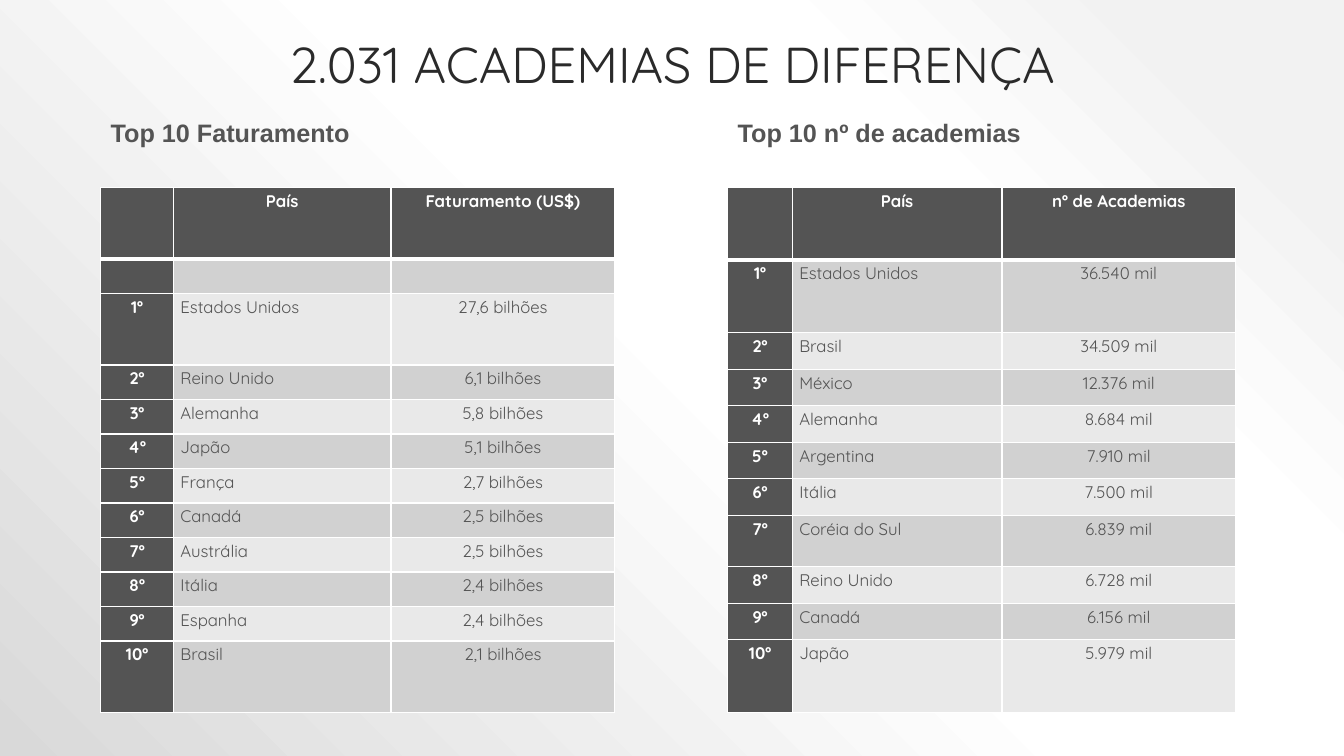
import dataclasses

import lxml.etree
import pptx
import pptx.dml.color
import pptx.enum.text
import pptx.oxml.ns
import pptx.util

WIDE, HIGH = pptx.util.Inches(13.33), pptx.util.Inches(7.5)
COLS, ROWS = 40, 30  # slide grid
DARK, WHITE, INK = "545454", "FFFFFF", "2A2A2A"
BANDS = ("D1D1D1", "E9E9E9")
ALIGN = pptx.enum.text.PP_ALIGN
ANCHOR = pptx.enum.text.MSO_ANCHOR
TOP, DEPTH = 7.44, 20.84  # both tables, in grid rows


@dataclasses.dataclass
class Rank:
    title: str
    left: float
    span: float  # width of the heading
    head: str
    cols: tuple[float, ...]
    tall: dict[int, float]  # rows that differ from the even height
    items: list[tuple[str, str]]
    gap: bool = False  # empty row under the header


RANKS = [
    Rank("Top 10 Faturamento", 3, 14.34, "Faturamento (US$)",
         (2.16, 6.48, 6.66), {0: 2.84, 2: 2.84, 11: 2.84},
         [("Estados Unidos", "27,6 bilhões"), ("Reino Unido", "6,1 bilhões"),
          ("Alemanha", "5,8 bilhões"), ("Japão", "5,1 bilhões"),
          ("França", "2,7 bilhões"), ("Canadá", "2,5 bilhões"),
          ("Austrália", "2,5 bilhões"), ("Itália", "2,4 bilhões"),
          ("Espanha", "2,4 bilhões"), ("Brasil", "2,1 bilhões")], gap=True),
    Rank("Top 10 nº de academias", 21.66, 13.86, "nº de Academias",
         (1.92, 6.24, 6.96), {0: 2.88, 1: 2.88, 7: 2.04, 10: 2.88},
         [("Estados Unidos", "36.540 mil"), ("Brasil", "34.509 mil"),
          ("México", "12.376 mil"), ("Alemanha", "8.684 mil"),
          ("Argentina", "7.910 mil"), ("Itália", "7.500 mil"),
          ("Coréia do Sul", "6.839 mil"), ("Reino Unido", "6.728 mil"),
          ("Canadá", "6.156 mil"), ("Japão", "5.979 mil")]),
]


def across(cols: float) -> int:
    return round(WIDE * cols / COLS)


def down(rows: float) -> int:
    return round(HIGH * rows / ROWS)


def tint(code: str) -> pptx.dml.color.RGBColor:
    return pptx.dml.color.RGBColor.from_string(code)


def node(root, tag: str, **attrs):
    return lxml.etree.SubElement(
        root, pptx.oxml.ns.qn(tag), {k: str(v) for k, v in attrs.items()})


def write(frame, text: str, *, size: float, font: str, color: str,
          bold: bool = False, align=ALIGN.LEFT, space: float = 1.0) -> None:
    par = frame.paragraphs[0]
    par.alignment, par.line_spacing = align, space
    run = par.add_run()
    run.text = text
    run.font.size, run.font.name = pptx.util.Pt(size), font
    run.font.bold = bold
    run.font.color.rgb = tint(color)


def label(slide, text: str, left: float, top: float, width: float,
          height: float, anchor, **style) -> None:
    box = slide.shapes.add_textbox(
        across(left), down(top), across(width), down(height))
    box.text_frame.word_wrap = True
    box.text_frame.vertical_anchor = anchor
    write(box.text_frame, text, **style)


def shade(slide) -> None:
    """Radial background centred on the top right corner."""
    slide.background.fill.gradient()
    grad = slide.element.xpath(".//p:bg//a:gradFill")[0]
    for child in list(grad):
        grad.remove(child)
    stops = node(grad, "a:gsLst")
    for pos, code in ((10, "F2F2F2"), (28, WHITE), (48, WHITE), (100, "D9D9D9")):
        node(node(stops, "a:gs", pos=pos * 1000), "a:srgbClr", val=code)
    node(node(grad, "a:path", path="circle"), "a:fillToRect",
         l=100000, b=100000)


def edge(cell, top: int, base: int) -> None:
    props = cell._tc.get_or_add_tcPr()
    for side, width in (("L", 1), ("R", 1), ("T", top), ("B", base)):
        line = node(props, f"a:ln{side}", w=pptx.util.Pt(width))
        node(node(line, "a:solidFill"), "a:srgbClr", val=WHITE)


def chart(slide, rank: Rank) -> None:
    """Draw one ranking table."""
    rows = [("", "País", rank.head)]
    if rank.gap:
        rows.append(("", "", ""))
    rows += [(f"{n}º", *item) for n, item in enumerate(rank.items, 1)]
    grid = slide.shapes.add_table(
        len(rows), len(rank.cols), across(rank.left), down(TOP),
        across(sum(rank.cols)), down(DEPTH)).table
    for col, width in zip(grid.columns, rank.cols):
        col.width = across(width)
    even = (DEPTH - sum(rank.tall.values())) / (len(rows) - len(rank.tall))
    for r, texts in enumerate(rows):
        grid.rows[r].height = down(rank.tall.get(r, even))
        for c, text in enumerate(texts):
            cell = grid.cell(r, c)
            key = r == 0 or c == 0
            edge(cell, 3 if r == 1 else 1, 3 if r == 0 else 1)
            cell.fill.solid()
            cell.fill.fore_color.rgb = tint(DARK if key else BANDS[(r - 1) % 2])
            cell.margin_left = cell.margin_right = pptx.util.Inches(0.07)
            cell.margin_top = cell.margin_bottom = 0
            if text:
                write(cell.text_frame, text, size=12, font="Quicksand",
                      color=WHITE if key else DARK, bold=key, space=1.15,
                      align=ALIGN.LEFT if r and c == 1 else ALIGN.CENTER)


def main() -> None:
    deck = pptx.Presentation()
    deck.slide_width, deck.slide_height = WIDE, HIGH
    slide = deck.slides.add_slide(deck.slide_layouts[6])
    shade(slide)
    # Title
    label(slide, "2.031 ACADEMIAS DE DIFERENÇA", 4, 1.2, 32, 2.76,
          ANCHOR.BOTTOM, size=36, font="Quicksand", color=INK,
          align=ALIGN.CENTER, space=0.9)
    # Rankings with their headings
    for rank in RANKS:
        chart(slide, rank)
        label(slide, rank.title, rank.left, 4.44, rank.span, 1.6,
              ANCHOR.MIDDLE, size=18, font="Arial", color=DARK, bold=True)
    deck.save("out.pptx")


if __name__ == "__main__":
    main()
